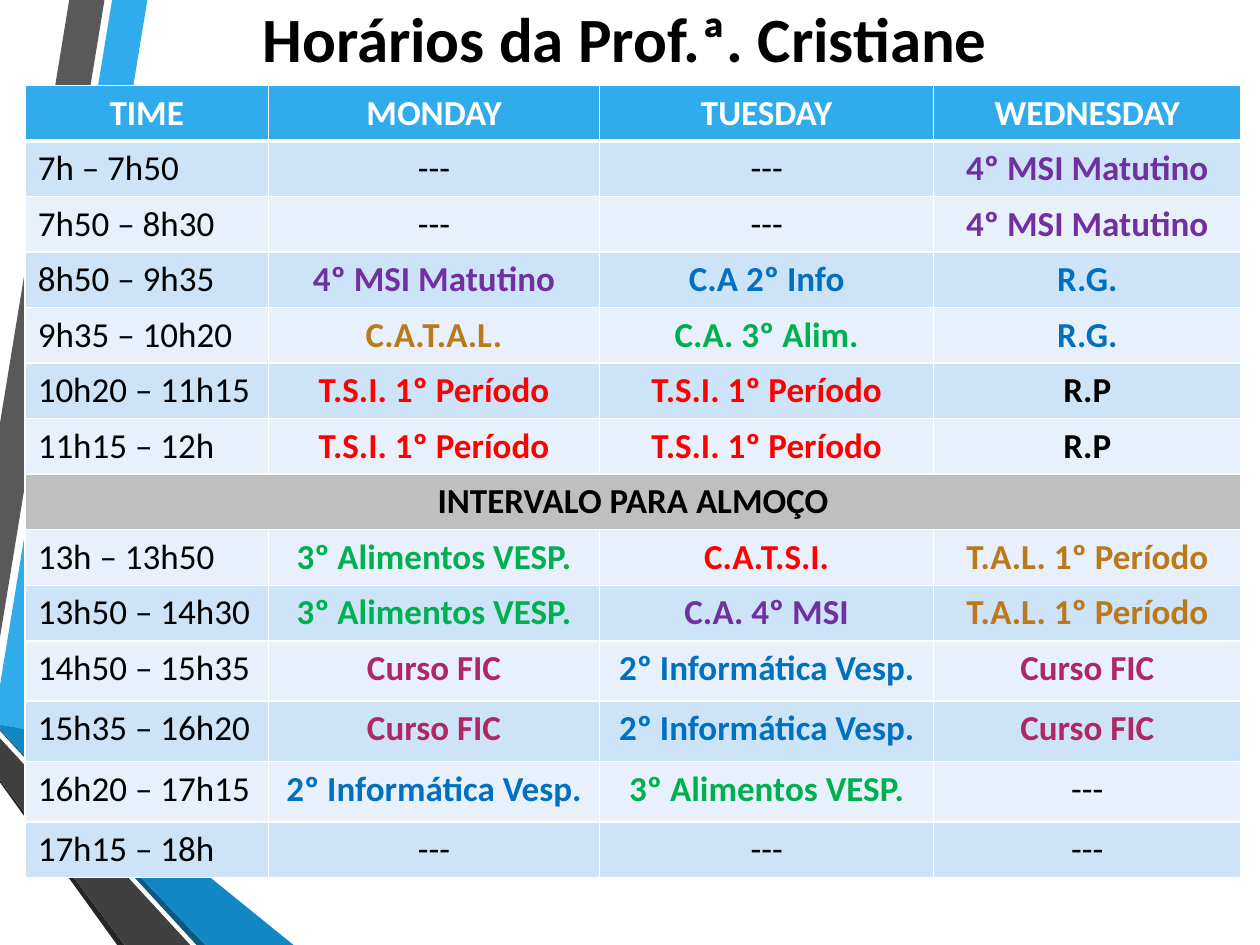
from pptx import Presentation
from pptx.dml.color import RGBColor
from pptx.enum.text import MSO_ANCHOR, PP_ALIGN
from pptx.oxml.ns import qn
from pptx.util import Inches, Pt
from lxml import etree

CENTER, LEFT = PP_ALIGN.CENTER, PP_ALIGN.LEFT
MIDDLE = MSO_ANCHOR.MIDDLE
FONT = "Calibri"

COLORS = {
    "white": "FFFFFF", "black": "000000", "header": "30ACEC",
    "band_dark": "CDE3F8", "band_light": "E8F1FB", "break": "BFBFBF",
    "purple": "7030A0", "blue": "0070C0", "brown": "BC791C",
    "green": "00B050", "red": "FF0000", "magenta": "AF2764",
    "sky": "30ACEC", "gray": "595959", "charcoal": "262626",
    "navy": "0C5A82", "ocean": "1287C3", "slate": "404040",
}

RIBBONS = [
    ("sky", [(0, 5.44), (0, 5.75), (0.22, 5.79), (1.17, 0), (0.89, 0)]),
    ("gray", [(0.83, 0), (0.55, 0), (0, 3.36), (0, 5.06)]),
    ("charcoal", [(0, 6.19), (0, 6.21), (0.93, 7.5), (0.99, 7.5)]),
    ("navy", [(0, 5.79), (0, 5.8), (1.56, 7.5), (1.63, 7.5)]),
    ("ocean", [(0, 5.79), (1.63, 7.5), (2.33, 7.5), (0.22, 5.79), (0, 5.75)]),
    ("slate", [(0, 6.19), (0.99, 7.5), (1.51, 7.5), (0, 5.86)]),
]

TITLE = "Horários da Prof.ª. Cristiane"
FREE = "---"
BREAK = "INTERVALO PARA ALMOÇO"
SCHEDULE = [
    ("TIME", "MONDAY", "TUESDAY", "WEDNESDAY"),
    ("7h – 7h50", FREE, FREE, "4º MSI Matutino"),
    ("7h50 – 8h30", FREE, FREE, "4º MSI Matutino"),
    ("8h50 – 9h35", "4º MSI Matutino", "C.A 2º Info", "R.G."),
    ("9h35 – 10h20", "C.A.T.A.L.", "C.A. 3º Alim.", "R.G."),
    ("10h20 – 11h15", "T.S.I. 1º Período", "T.S.I. 1º Período", "R.P"),
    ("11h15 – 12h", "T.S.I. 1º Período", "T.S.I. 1º Período", "R.P"),
    (BREAK,),
    ("13h – 13h50", "3º Alimentos VESP.", "C.A.T.S.I.", "T.A.L. 1º Período"),
    ("13h50 – 14h30", "3º Alimentos VESP.", "C.A. 4º MSI", "T.A.L. 1º Período"),
    ("14h50 – 15h35", "Curso FIC", "2º Informática Vesp.", "Curso FIC"),
    ("15h35 – 16h20", "Curso FIC", "2º Informática Vesp.", "Curso FIC"),
    ("16h20 – 17h15", "2º Informática Vesp.", "3º Alimentos VESP.", FREE),
    ("17h15 – 18h", FREE, FREE, FREE),
]
COURSE_COLORS = {
    "4º MSI Matutino": "purple", "C.A. 4º MSI": "purple",
    "C.A 2º Info": "blue", "2º Informática Vesp.": "blue", "R.G.": "blue",
    "C.A.T.A.L.": "brown", "T.A.L. 1º Período": "brown",
    "C.A. 3º Alim.": "green", "3º Alimentos VESP.": "green",
    "T.S.I. 1º Período": "red", "C.A.T.S.I.": "red",
    "Curso FIC": "magenta",
}
COL_WIDTHS = [1.93, 2.63, 2.65, 2.44]
ROW_HEIGHT, TALL_HEIGHT = 0.44, 0.48
TALL_ROWS = (10, 11, 12)


def rgb(name):
    return RGBColor.from_string(COLORS[name])


def write(p, text, size, color, bold, align):
    p.text = text
    p.alignment = align
    p.font.name = FONT
    p.font.size = Pt(size)
    p.font.bold = bold
    p.font.color.rgb = rgb(color)


def set_borders(cell, widths):
    tc_pr = cell._tc.get_or_add_tcPr()
    for i, (side, width) in enumerate(widths.items()):
        ln = etree.Element(qn(f"a:ln{side}"), w=str(Pt(width)))
        fill = etree.SubElement(ln, qn("a:solidFill"))
        etree.SubElement(fill, qn("a:srgbClr"), val=COLORS["white"])
        tc_pr.insert(i, ln)


def add_ribbon(s, color, points):
    start, *rest = [(Inches(x), Inches(y)) for x, y in points]
    builder = s.shapes.build_freeform(*start)
    builder.add_line_segments(rest, close=True)
    sp = builder.convert_to_shape()
    sp.shadow.inherit = False
    sp.fill.solid()
    sp.fill.fore_color.rgb = rgb(color)
    sp.line.fill.background()


def row_fill(row):
    if row == 0:
        return "header"
    if SCHEDULE[row][0] == BREAK:
        return "break"
    return "band_dark" if row % 2 else "band_light"


def add_schedule(s):
    heights = [TALL_HEIGHT if i in TALL_ROWS else ROW_HEIGHT
               for i in range(len(SCHEDULE))]
    table = s.shapes.add_table(
        len(SCHEDULE), len(COL_WIDTHS), Inches(0.2), Inches(0.68),
        Inches(sum(COL_WIDTHS)), Inches(sum(heights))).table
    for col, width in zip(table.columns, COL_WIDTHS):
        col.width = Inches(width)
    for i, (row, height) in enumerate(zip(SCHEDULE, heights)):
        table.rows[i].height = Inches(height)
        if row[0] == BREAK:
            table.cell(i, 0).merge(table.cell(i, len(COL_WIDTHS) - 1))
        for j in range(len(COL_WIDTHS)):
            cell = table.cell(i, j)
            cell.fill.solid()
            cell.fill.fore_color.rgb = rgb(row_fill(i))
            set_borders(cell, {"L": 1, "R": 1, "T": 3 if i == 1 else 1,
                               "B": 3 if i == 0 else 1})
        for j, text in enumerate(row):
            is_time = j == 0 and i > 0 and text != BREAK
            color = "white" if i == 0 else COURSE_COLORS.get(text, "black")
            write(table.cell(i, j).text_frame.paragraphs[0], text, 20, color,
                  not is_time and text != FREE, LEFT if is_time else CENTER)


def main():
    prs = Presentation()
    prs.slide_width, prs.slide_height = Inches(10), Inches(7.5)
    s = prs.slides.add_slide(prs.slide_layouts[6])
    for color, points in RIBBONS:
        add_ribbon(s, color, points)
    add_schedule(s)
    tf = s.shapes.add_textbox(Inches(1.06), 0, Inches(7.8), Inches(0.6)).text_frame
    tf.word_wrap = True
    tf.vertical_anchor = MIDDLE
    write(tf.paragraphs[0], TITLE, 36, "black", True, CENTER)
    prs.save("out.pptx")


if __name__ == "__main__":
    main()
